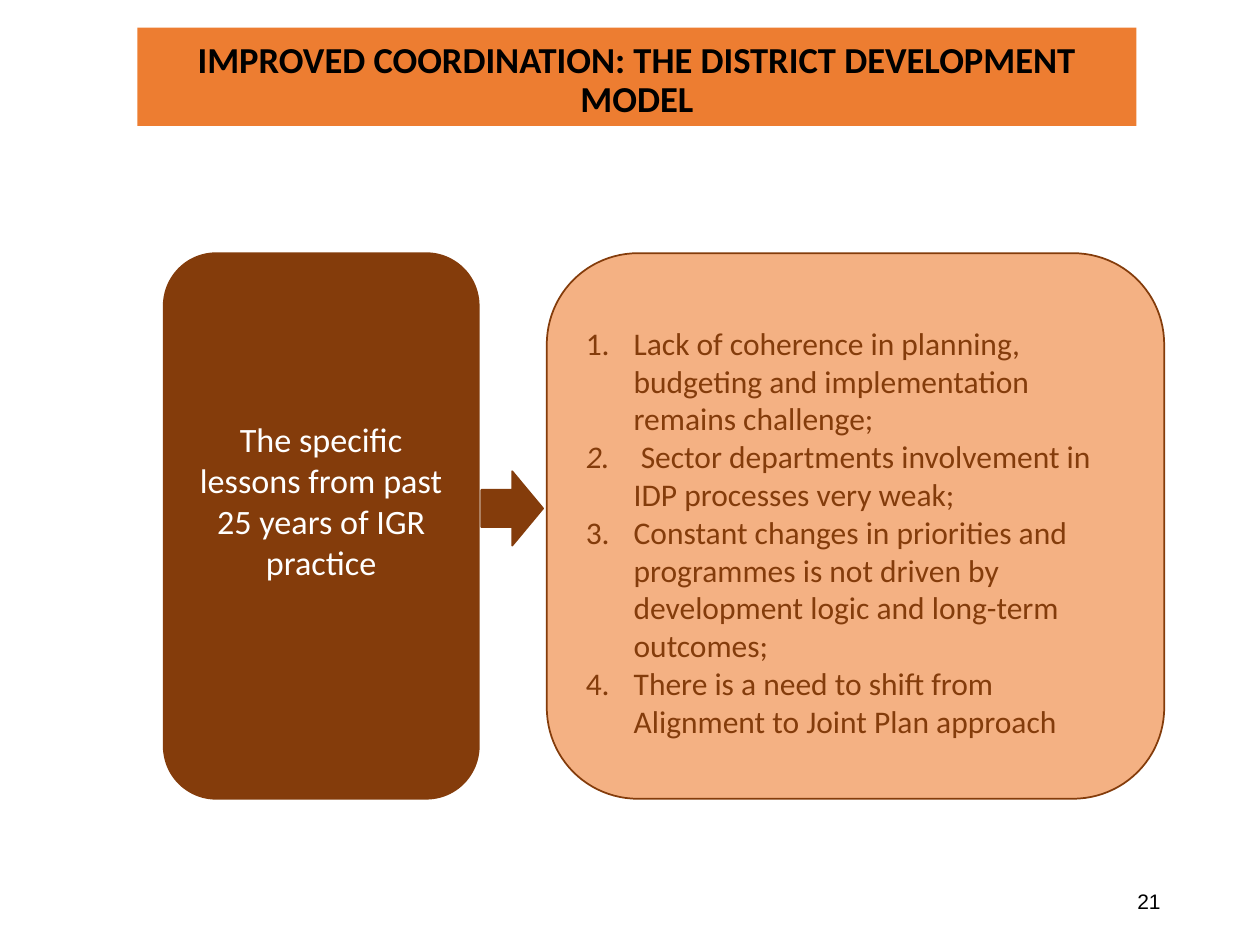
"""Build the District Development Model lessons slide."""
from dataclasses import dataclass
from typing import Optional

import pptx
import pptx.dml.color
import pptx.enum.shapes
import pptx.enum.text
import pptx.oxml.ns
import pptx.util
from lxml import etree

Inches = pptx.util.Inches
Pt = pptx.util.Pt
RGBColor = pptx.dml.color.RGBColor
MSO_SHAPE = pptx.enum.shapes.MSO_SHAPE
PP_ALIGN = pptx.enum.text.PP_ALIGN

ORANGE = RGBColor(0xED, 0x7D, 0x31)
PEACH = RGBColor(0xF4, 0xB1, 0x83)
BROWN = RGBColor(0x84, 0x3C, 0x0B)
WHITE = RGBColor(0xFF, 0xFF, 0xFF)
BLACK = RGBColor(0x00, 0x00, 0x00)

LESSONS = [
    "Lack of coherence in planning, budgeting and implementation remains challenge;",
    "Sector departments involvement in IDP processes very weak;",
    "Constant changes in priorities and programmes is not driven by development "
    "logic and long-term outcomes;",
    "There is a need to shift from Alignment to Joint Plan approach",
]
ITALIC_NUMBER = 1


@dataclass
class Box:
    left: float
    top: float
    width: float
    height: float
    kind: MSO_SHAPE = MSO_SHAPE.RECTANGLE
    fill: Optional[RGBColor] = None
    line: Optional[RGBColor] = None
    margin_top: float = 0.05
    margin_bottom: float = 0.05


@dataclass
class Style:
    size: float
    color: RGBColor
    align: PP_ALIGN = PP_ALIGN.CENTER
    name: str = "Calibri"
    bold: bool = False
    spacing: Optional[float] = None


def add_box(slide: pptx.slide.Slide, box: Box) -> pptx.shapes.autoshape.Shape:
    """Draw a filled shape or a plain text box with its text area prepared."""
    place = [Inches(v) for v in (box.left, box.top, box.width, box.height)]
    if box.fill is None:
        sp = slide.shapes.add_textbox(*place)
    else:
        sp = slide.shapes.add_shape(box.kind, *place)
        sp.shadow.inherit = False
        sp.fill.solid()
        sp.fill.fore_color.rgb = box.fill
        if box.line is None:
            sp.line.fill.background()
        else:
            sp.line.color.rgb = box.line
            sp.line.width = Pt(1)
    tf = sp.text_frame
    tf.word_wrap = True
    tf.vertical_anchor = pptx.enum.text.MSO_ANCHOR.MIDDLE
    tf.margin_top = Inches(box.margin_top)
    tf.margin_bottom = Inches(box.margin_bottom)
    return sp


def style_paragraph(p: pptx.text.text._Paragraph, style: Style) -> None:
    """Apply a style to a whole paragraph."""
    p.alignment = style.align
    if style.spacing:
        p.line_spacing = style.spacing
    p.font.name = style.name
    p.font.size = Pt(style.size)
    p.font.bold = style.bold
    p.font.color.rgb = style.color


def add_text(slide: pptx.slide.Slide, box: Box, text: str, style: Style) -> None:
    """Draw a box holding one paragraph."""
    p = add_box(slide, box).text_frame.paragraphs[0]
    p.add_run().text = text
    style_paragraph(p, style)


def add_numbered(slide: pptx.slide.Slide, box: Box, items: list[str], style: Style) -> None:
    """Draw a box holding an automatically numbered list."""
    tf = add_box(slide, box).text_frame
    for i, item in enumerate(items):
        p = tf.paragraphs[0] if i == 0 else tf.add_paragraph()
        if i == ITALIC_NUMBER:
            r = p.add_run()
            r.text = " "
            r.font.italic = True
        p.add_run().text = item
        style_paragraph(p, style)
        pPr = p._p.get_or_add_pPr()
        pPr.set("marL", str(Inches(0.38)))
        pPr.set("indent", str(-Inches(0.38)))
        number = etree.Element(pptx.oxml.ns.qn("a:buAutoNum"), type="arabicPeriod")
        pPr.insert(0, number)


def main() -> None:
    """Assemble and save the slide."""
    prs = pptx.Presentation()
    prs.slide_width = Inches(10)
    prs.slide_height = Inches(7.5)
    slide = prs.slides.add_slide(prs.slide_layouts[6])

    add_text(
        slide,
        Box(1.09, 0.22, 7.93, 0.78, fill=ORANGE, margin_top=0.12),
        "IMPROVED COORDINATION: THE DISTRICT DEVELOPMENT MODEL",
        Style(20.9, BLACK, bold=True, spacing=0.9),
    )
    add_text(
        slide,
        Box(7.06, 6.95, 2.25, 0.4),
        "21",
        Style(12, BLACK, PP_ALIGN.RIGHT, "Arial"),
    )
    rounded = MSO_SHAPE.ROUNDED_RECTANGLE
    add_numbered(
        slide,
        Box(4.34, 2.01, 4.9, 4.33, rounded, PEACH, BROWN, margin_top=0.14),
        LESSONS,
        Style(18, BROWN, PP_ALIGN.LEFT),
    )
    add_text(
        slide,
        Box(1.3, 2.01, 2.5, 4.33, rounded, BROWN, BROWN, margin_bottom=0.45),
        "The specific lessons from past 25 years of IGR practice",
        Style(19.5, WHITE),
    )
    add_box(slide, Box(3.82, 3.74, 0.49, 0.59, MSO_SHAPE.RIGHT_ARROW, BROWN, BROWN))
    prs.save("out.pptx")


if __name__ == "__main__":
    main()
